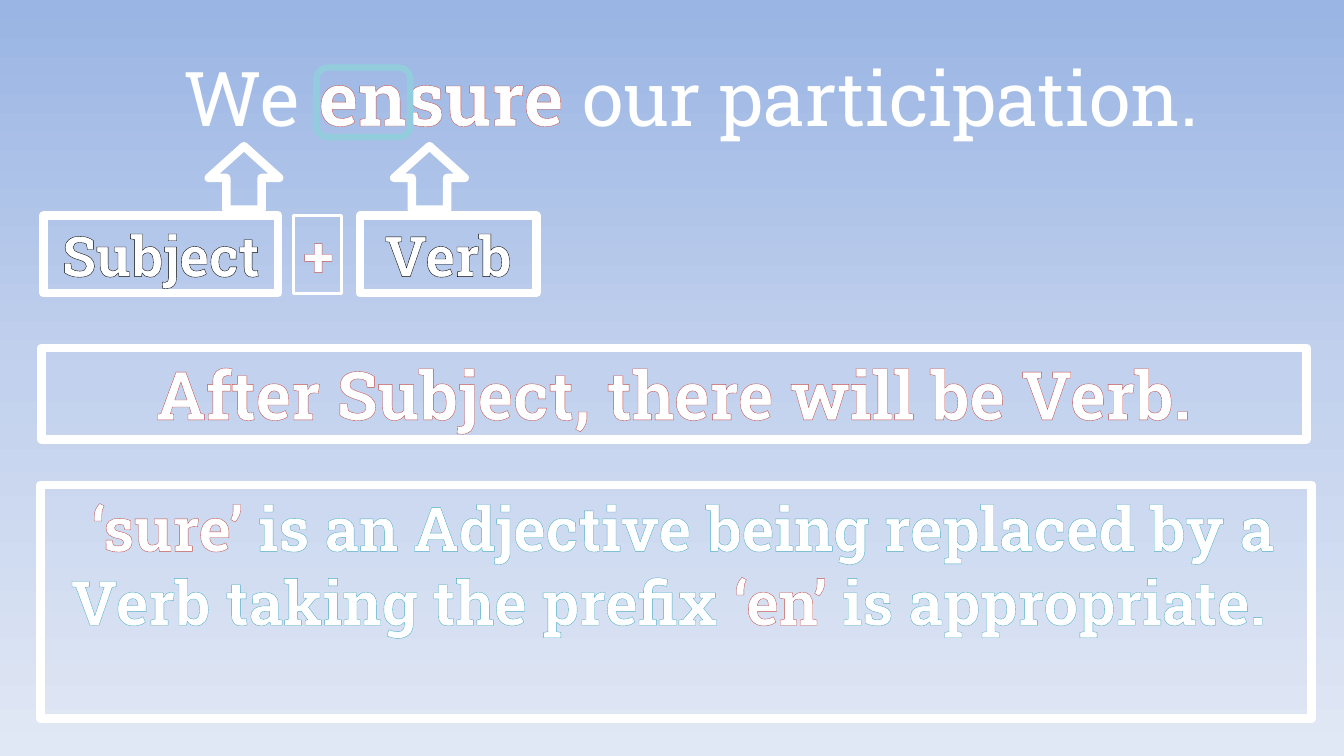
from copy import deepcopy

from lxml import etree
from pptx import Presentation
from pptx.dml.color import RGBColor
from pptx.enum import shapes, text
from pptx.oxml import ns
from pptx.util import Inches, Pt

WHITE, RED, TEAL, AQUA, BLACK = "FFFFFF", "C0504D", "4BACC6", "93CDDD", "000000"
RED_EDGE, TEAL_EDGE, BLACK_EDGE = (RED, 0.52), (TEAL, 0.8), (BLACK, 1.06)
SHAPE = shapes.MSO_SHAPE


def write(frame, size, spans):
    """Fill the frame with one centred line of (words, glyph edge) spans; edged spans are bold."""
    frame.vertical_anchor = text.MSO_ANCHOR.TOP
    frame.auto_size = text.MSO_AUTO_SIZE.NONE
    para = frame.paragraphs[0]
    para.alignment = text.PP_ALIGN.CENTER
    for words, edge in spans:
        span = para.add_run()
        span.text = words
        span.font.name = "Roboto Slab"
        span.font.size = Pt(size)
        span.font.bold = edge is not None
        span.font.color.rgb = RGBColor.from_string(WHITE)
        if edge:
            color, width = edge
            line = etree.Element(ns.qn("a:ln"), w=str(Pt(width)))
            fill = etree.SubElement(line, ns.qn("a:solidFill"))
            etree.SubElement(fill, ns.qn("a:srgbClr"), val=color)
            span.font.fill  # the run properties exist from here on
            span._r.get_or_add_rPr().insert(0, line)


def add_frame(kind, place, color, weight):
    shape = page.shapes.add_shape(kind, *map(Inches, place))
    shape.shadow.inherit = False
    shape.fill.background()
    shape.line.color.rgb = RGBColor.from_string(color)
    shape.line.width = Pt(weight)
    return shape


deck = Presentation()
deck.slide_width, deck.slide_height = Inches(13.33), Inches(7.5)
page = deck.slides.add_slide(deck.slide_layouts[5])

# Background: three gradient stops from top to bottom
backdrop = page.background.fill
backdrop.gradient()
backdrop.gradient_angle = 270
stop_list = page.element.find(".//" + ns.qn("a:gsLst"))
stop_list.insert(1, deepcopy(stop_list[0]))
for stop, color, position in zip(
    backdrop.gradient_stops, ("9AB5E4", "C2D1ED", "E1E8F5"), (0, 0.5, 1)
):
    stop.color.rgb = RGBColor.from_string(color)
    stop.position = position

# Example sentence
title = page.shapes.title
title.left, title.top, title.width, title.height = map(Inches, (1.71, 0.45, 10.29, 1.01))
title.text_frame.word_wrap = False
write(title.text_frame, 54,
      [("We ", None), ("ensure", RED_EDGE), (" our participation.", None)])

add_frame(SHAPE.ROUNDED_RECTANGLE, (3.14, 0.67, 0.93, 0.69), AQUA, 4.5)

# Labels and explanations: place, line weight, text size, spans
boxes = [
    ((0.43, 2.14, 2.33, 0.77), 6, 40, [("Subject", BLACK_EDGE)]),
    ((3.57, 2.14, 1.75, 0.77), 6, 40, [("Verb", BLACK_EDGE)]),
    ((2.91, 2.14, 0.48, 0.77), 2.25, 40, [("+", RED_EDGE)]),
    ((0.41, 3.45, 12.55, 0.91), 6, 48, [("After Subject, there will be Verb.", RED_EDGE)]),
    ((0.4, 4.81, 12.61, 2.32), 6, 44, [
        (" ‘sure’ ", RED_EDGE),
        ("is an Adjective being replaced by a Verb taking the prefix", TEAL_EDGE),
        (" ‘en’ ", RED_EDGE),
        ("is appropriate. ", TEAL_EDGE),
    ]),
]
for place, weight, size, spans in boxes:
    box = add_frame(SHAPE.RECTANGLE, place, WHITE, weight)
    box.text_frame.word_wrap = True
    write(box.text_frame, size, spans)

# Arrows from the labels up to the sentence
for left in (2.07, 3.91):
    add_frame(SHAPE.UP_ARROW, (left, 1.45, 0.7, 0.63), WHITE, 6)

deck.save("out.pptx")
